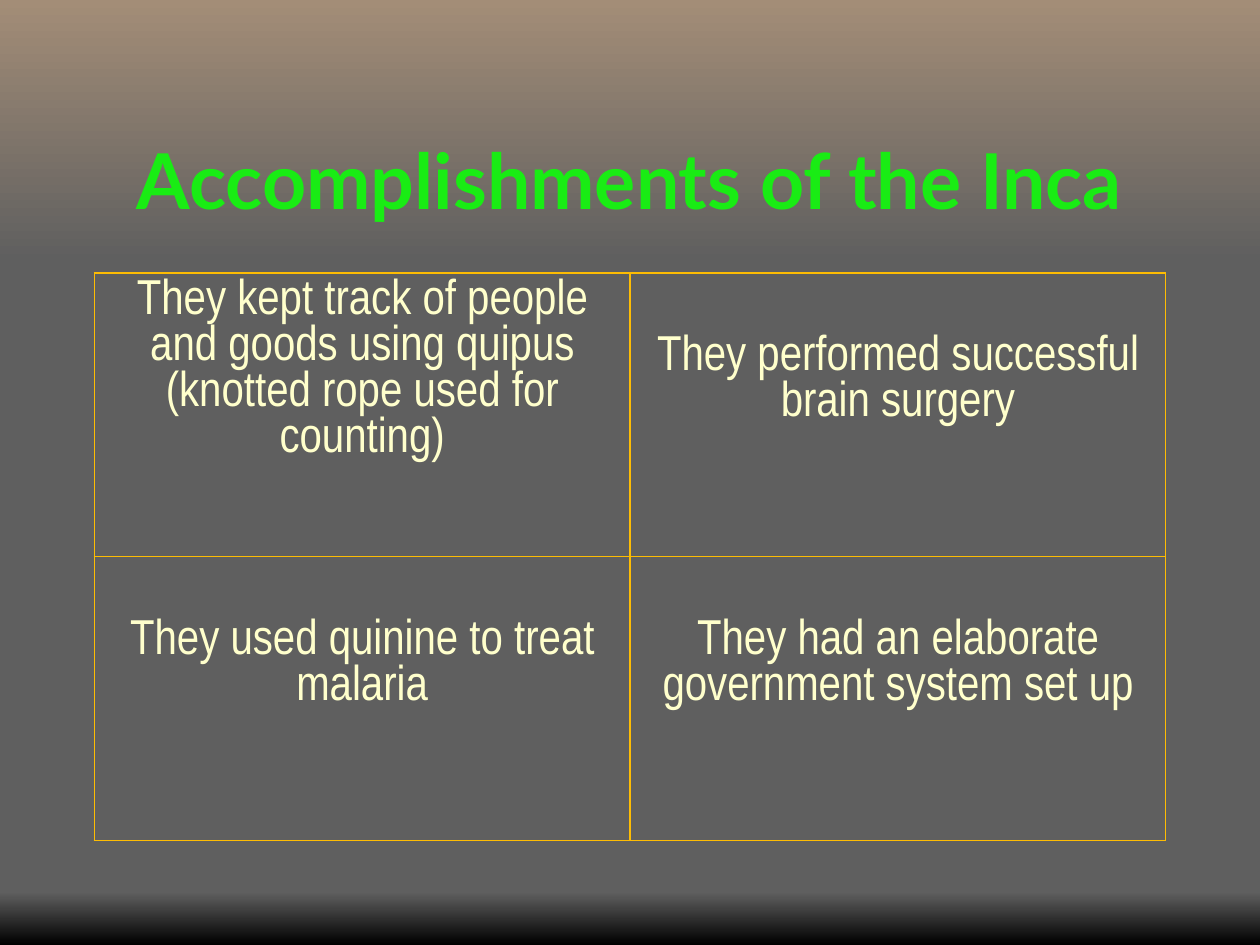
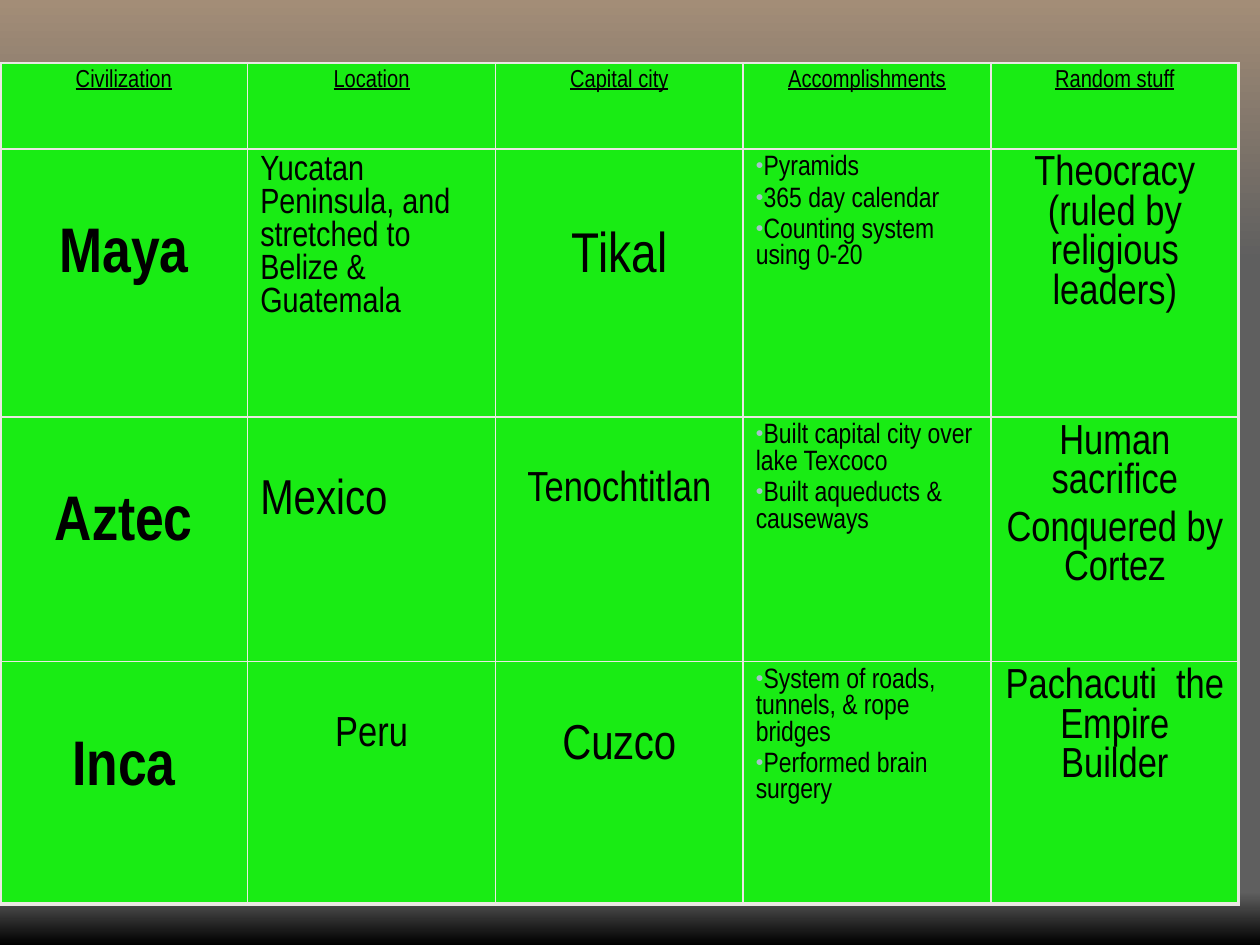
from lxml import etree
from pptx import Presentation
from pptx.dml.color import RGBColor
from pptx.enum.shapes import MSO_SHAPE
from pptx.enum.text import MSO_ANCHOR, PP_ALIGN
from pptx.oxml.ns import qn
from pptx.util import Cm, Pt

LEFT, CENTER = PP_ALIGN.LEFT, PP_ALIGN.CENTER
RECT, BOTTOM = MSO_SHAPE.RECTANGLE, MSO_ANCHOR.BOTTOM

# Content: each cell is (paragraphs, size, size of the line left free above)
TITLE = "Accomplishments of the Inca"
INCA = [
    [(["They kept track of people and goods using quipus (knotted rope used for counting)"], 28, 0),
     (["They performed successful brain surgery"], 28, 28)],
    [(["They used quinine to treat malaria"], 28, 28),
     (["They had an elaborate government system set up"], 28, 28)],
]
HEADINGS = ["Civilization", "Location", "Capital city", "Accomplishments", "Random stuff"]
CIVILIZATIONS = [
    [(["Maya"], 36, 36),
     (["Yucatan Peninsula, and stretched to Belize & Guatemala"], 20, 0),
     (["Tikal"], 32, 40),
     (["Pyramids", "365 day calendar", "Counting system using 0-20"], 16, 0),
     (["Theocracy (ruled by religious leaders)"], 24, 0)],
    [(["Aztec"], 36, 36),
     (["Mexico"], 28, 28),
     (["Tenochtitlan"], 24, 24),
     (["Built capital city over lake Texcoco", "Built aqueducts & causeways"], 16, 0),
     (["Human sacrifice", "Conquered by Cortez"], 24, 0)],
    [(["Inca"], 36, 36),
     (["Peru"], 24, 24),
     (["Cuzco"], 28, 28),
     (["System of roads, tunnels, & rope bridges", "Performed brain surgery"], 16, 0),
     (["Pachacuti  the Empire Builder"], 24, 0)],
]

# Theme
THEME = {
    "back": "5F5F5F", "sand": "A38D77", "black": "000000", "green": "19EC14",
    "cream": "FFFFCC", "gold": "FDBC03", "ivory": "EAE8E2", "bullet": "A7C1CB",
    "title_font": "Lato", "body_font": "Arial Narrow",
    "title_size": 44, "head_size": 14, "thin": 1, "thick": 2.25,
}
LINE, SPACE = 0.94, 0.19  # line height and paragraph gap, per point of type size
WIDTH, HEIGHT = 25.4, 19.05
BANDS = [(0, 5.28, "sand", "back"), (17.98, 1.07, "back", "black")]


def rgb(name):
    return RGBColor.from_string(THEME[name])


def add_xml(parent, tag, **attrs):
    return etree.SubElement(parent, qn(tag), attrs)


def add_run(p, text, color, **fmt):
    r = p.add_run()
    r.text = text
    r.font.color.rgb = rgb(color)
    for key, value in fmt.items():
        setattr(r.font, key, value)
    return r


def new_slide(prs):
    """Slide with the shared background and its two gradient bands."""
    s = prs.slides.add_slide(prs.slide_layouts[6])
    s.background.fill.solid()
    s.background.fill.fore_color.rgb = rgb("back")
    for top, height, start, end in BANDS:
        sp = s.shapes.add_shape(RECT, 0, Cm(top), Cm(WIDTH), Cm(height))
        sp.shadow.inherit = False
        sp.line.fill.background()
        sp.fill.gradient()
        sp.fill.gradient_angle = 270
        for stop, color in zip(sp.fill.gradient_stops, (start, end)):
            stop.color.rgb = rgb(color)
    return s


def add_title(s, text):
    tf = s.shapes.add_textbox(Cm(1.9), Cm(1.47), Cm(21.6), Cm(3.18)).text_frame
    tf.word_wrap = True
    tf.vertical_anchor = BOTTOM
    p = tf.paragraphs[0]
    p.alignment = CENTER
    r = add_run(p, text, "green", name=THEME["title_font"],
                size=Pt(THEME["title_size"]), bold=True)
    # Text shadow goes right after the fill
    effects = etree.Element(qn("a:effectLst"))
    shadow = add_xml(effects, "a:outerShdw", dist="38100", dir="2700000", algn="tl")
    add_xml(shadow, "a:srgbClr", val=THEME["black"])
    r.font._element.find(qn("a:solidFill")).addnext(effects)


def set_borders(cell, color, widths):
    tc_pr = cell._tc.get_or_add_tcPr()
    for i, (side, width) in enumerate(zip("LRTB", widths)):
        ln = etree.Element(qn(f"a:ln{side}"), w=str(Pt(width)))
        add_xml(add_xml(ln, "a:solidFill"), "a:srgbClr", val=THEME[color])
        tc_pr.insert(i, ln)


def add_bullet(p):
    p_pr = p._p.get_or_add_pPr()
    p_pr.set("marL", "0")
    p_pr.set("indent", "0")
    add_xml(add_xml(p_pr, "a:buClr"), "a:srgbClr", val=THEME["bullet"])
    add_xml(p_pr, "a:buSzPct", val="80000")
    add_xml(p_pr, "a:buChar", char="•")


def fill_cell(cell, content, color, align=CENTER, bullet=False, **fmt):
    lines, size, free = content
    tf = cell.text_frame
    if free:
        cell.margin_top = Cm(0.13) + Pt(LINE * free + SPACE * size)
    for i, line in enumerate(lines):
        p = tf.add_paragraph() if i else tf.paragraphs[0]
        p.alignment = align
        if i:
            p.space_before = Pt(SPACE * size)
        if bullet:
            add_bullet(p)
        add_run(p, line, color, name=THEME["body_font"], size=Pt(size), **fmt)


def add_grid(s, left, top, width, heights, n_cols):
    table = s.shapes.add_table(len(heights), n_cols, Cm(left), Cm(top),
                               Cm(width), Cm(sum(heights))).table
    table.first_row = table.horz_banding = False
    for col in table.columns:
        col.width = Cm(width / n_cols)
    for row, height in zip(table.rows, heights):
        row.height = Cm(height)
    return table


def inca_slide(prs):
    s = new_slide(prs)
    add_title(s, TITLE)
    table = add_grid(s, 1.9, 5.5, 21.6, [5.72, 5.72], 2)
    for i, row in enumerate(INCA):
        for j, content in enumerate(row):
            cell = table.cell(i, j)
            cell.fill.background()
            set_borders(cell, "gold", [THEME["thin"]] * 4)
            fill_cell(cell, content, "cream")


def comparison_slide(prs):
    s = new_slide(prs)
    head = [([text], THEME["head_size"], 0) for text in HEADINGS]
    rows = [head] + CIVILIZATIONS
    table = add_grid(s, 0, 1.27, 24.97, [1.73, 5.41, 4.93, 4.88], len(head))
    last_row, last_col = len(rows) - 1, len(head) - 1
    thin, thick = THEME["thin"], THEME["thick"]
    column_formats = [{"bold": True}, {"align": LEFT}, {},
                      {"align": LEFT, "bullet": True}, {}]
    for i, row in enumerate(rows):
        for j, content in enumerate(row):
            cell = table.cell(i, j)
            cell.fill.solid()
            cell.fill.fore_color.rgb = rgb("green")
            set_borders(cell, "ivory", [thick if j == 0 else thin,
                                        thick if j == last_col else thin,
                                        thin,
                                        thick if i == last_row else thin])
            fmt = column_formats[j] if i else {"underline": True}
            if content[0] == ["Peru"]:
                fmt = {"align": CENTER}
            fill_cell(cell, content, "black", **fmt)


def main():
    prs = Presentation()
    prs.slide_width, prs.slide_height = Cm(WIDTH), Cm(HEIGHT)
    inca_slide(prs)
    comparison_slide(prs)
    prs.save("out.pptx")


if __name__ == "__main__":
    main()
